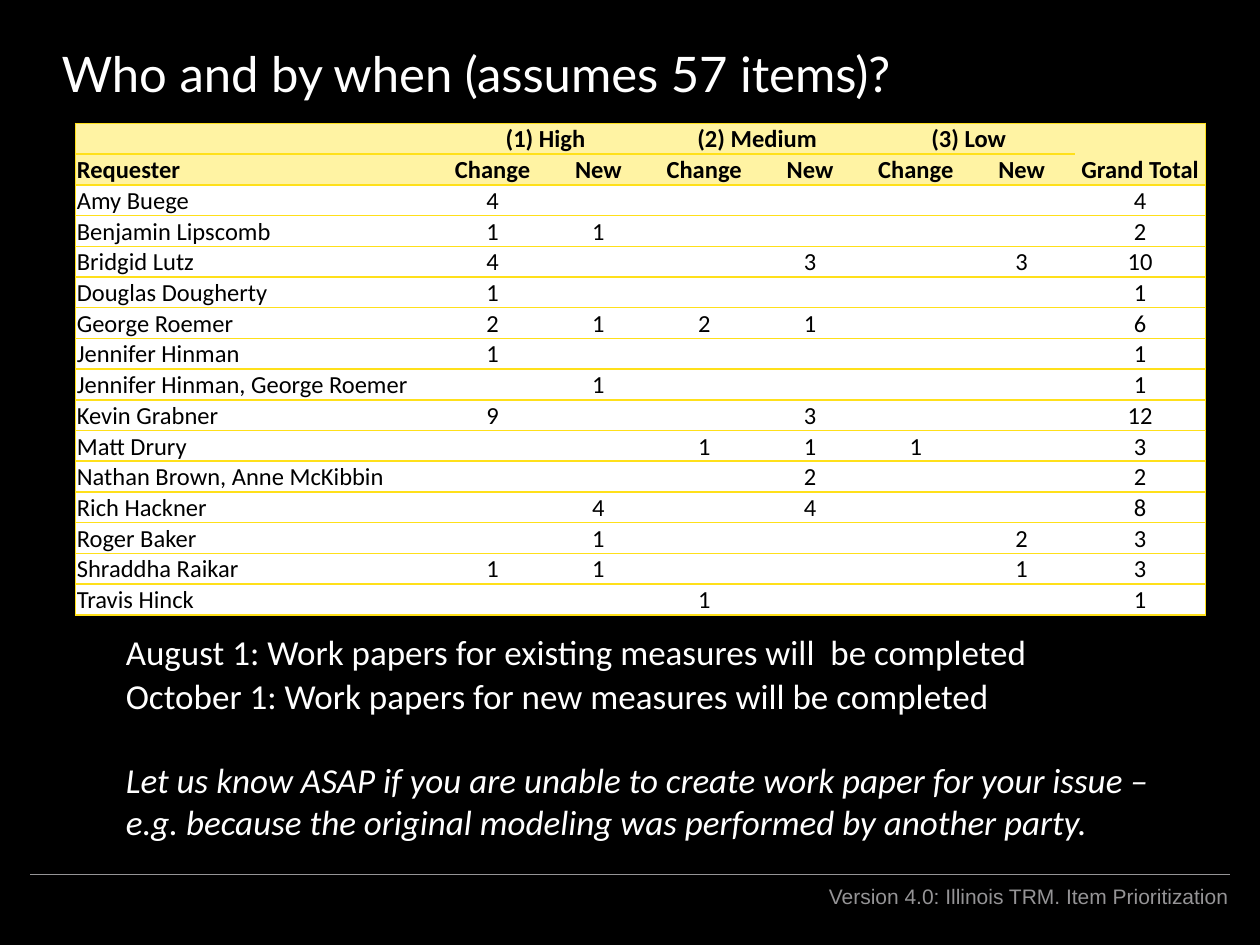
from dataclasses import dataclass

from lxml import etree
from pptx import Presentation
from pptx import util as u
from pptx.dml import color
from pptx.enum import shapes, text
from pptx.oxml import ns


@dataclass(frozen=True)
class Theme:
    background: str = "000000"
    light: str = "FFFFFF"
    dark: str = "000000"
    muted: str = "959496"
    header: str = "FFF3A3"
    border: str = "FFE01A"
    title_font: str = "Lato"
    body_font: str = "Calibri"
    footer_font: str = "Arial"
    title_size: int = 28
    body_size: int = 20
    table_size: int = 14
    footer_size: int = 12
    rule_width: float = 0.75
    border_width: float = 1


THEME = Theme()
CENTER, RIGHT = text.PP_ALIGN.CENTER, text.PP_ALIGN.RIGHT

COLUMN_WIDTHS = [2.89] + [0.84] * 6 + [1.04]
PRIORITIES = ["(1) High", "(2) Medium", "(3) Low"]
# High, medium and low counts, each as change and new, then the grand total
REQUESTS = [
    ("Amy Buege", 4, "", "", "", "", "", 4),
    ("Benjamin Lipscomb", 1, 1, "", "", "", "", 2),
    ("Bridgid Lutz", 4, "", "", 3, "", 3, 10),
    ("Douglas Dougherty", 1, "", "", "", "", "", 1),
    ("George Roemer", 2, 1, 2, 1, "", "", 6),
    ("Jennifer Hinman", 1, "", "", "", "", "", 1),
    ("Jennifer Hinman, George Roemer", "", 1, "", "", "", "", 1),
    ("Kevin Grabner", 9, "", "", 3, "", "", 12),
    ("Matt Drury", "", "", 1, 1, 1, "", 3),
    ("Nathan Brown, Anne McKibbin", "", "", "", 2, "", "", 2),
    ("Rich Hackner", "", 4, "", 4, "", "", 8),
    ("Roger Baker", "", 1, "", "", "", 2, 3),
    ("Shraddha Raikar", 1, 1, "", "", "", 1, 3),
    ("Travis Hinck", "", "", 1, "", "", "", 1),
]
# Text, space before in points, italic
NOTES = [
    ("August 1: Work papers for existing measures will  be completed", 0, False),
    ("October 1: Work papers for new measures will be completed", 1, False),
    ("Let us know ASAP if you are unable to create work paper for your issue – "
     "e.g. because the original modeling was performed by another party.", 24, True),
]


def rgb(value):
    return color.RGBColor.from_string(value)


def set_all(obj, values):
    for name, value in values.items():
        setattr(obj, name, value)


def add_run(p, content, hue, **font):
    r = p.add_run()
    r.text = content
    set_all(r.font, font)
    r.font.color.rgb = rgb(hue)


def add_text_box(s, box, paragraphs, hue, align=None, anchor=text.MSO_ANCHOR.TOP, **font):
    tf = s.shapes.add_textbox(*map(u.Inches, box)).text_frame
    set_all(tf, {"word_wrap": True, "vertical_anchor": anchor})
    for i, (content, before, italic) in enumerate(paragraphs):
        p = tf.add_paragraph() if i else tf.paragraphs[0]
        p.alignment = align
        if before:
            p.space_before = u.Pt(before)
        add_run(p, content, hue, italic=italic, **font)


def add_rule(s, x1, x2, y):
    line = s.shapes.add_connector(shapes.MSO_CONNECTOR.STRAIGHT,
                                  *map(u.Inches, (x1, y, x2, y)))
    line.line.color.rgb = rgb(THEME.muted)
    line.line.width = u.Pt(THEME.rule_width)
    etree.SubElement(line._element.spPr, ns.qn("a:effectLst"))


def set_borders(cell, sides):
    """Draw the given sides (letters of LRTB) and clear the others."""
    props = cell._tc.get_or_add_tcPr()
    for side in "LRTB":
        ln = etree.SubElement(props, ns.qn(f"a:ln{side}"),
                              w=str(u.Pt(THEME.border_width)))
        if side in sides:
            fill = etree.SubElement(ln, ns.qn("a:solidFill"))
            etree.SubElement(fill, ns.qn("a:srgbClr"), val=THEME.border)
        else:
            etree.SubElement(ln, ns.qn("a:noFill"))


def format_cell(cell, content, fill, sides, bold, align):
    set_borders(cell, sides)
    cell.fill.solid()
    cell.fill.fore_color.rgb = rgb(fill)
    edge = u.Inches(0.01)
    set_all(cell, {"margin_left": edge, "margin_right": edge, "margin_top": edge,
                   "margin_bottom": 0, "vertical_anchor": text.MSO_ANCHOR.BOTTOM})
    p = cell.text_frame.paragraphs[0]
    p.alignment = align
    if content == "":
        # Keeps an empty cell from growing its row
        etree.SubElement(p._p, ns.qn("a:endParaRPr"), sz=str(THEME.table_size * 100))
    else:
        add_run(p, str(content), THEME.dark, bold=bold,
                size=u.Pt(THEME.table_size), name=THEME.body_font)


def add_request_table(s):
    top = [""] + [c for name in PRIORITIES for c in (name, "")] + ["Grand Total"]
    sub = ["Requester"] + ["Change", "New"] * len(PRIORITIES) + [""]
    rows = [top, sub, *REQUESTS]
    last = len(COLUMN_WIDTHS) - 1
    table = s.shapes.add_table(len(rows), len(COLUMN_WIDTHS),
                               *map(u.Inches, (0.6, 0.98, 9, 3.9))).table
    set_all(table, {"first_row": False, "horz_banding": False})
    for column, width in zip(table.columns, COLUMN_WIDTHS):
        column.width = u.Inches(width)
    for i, row in enumerate(rows):
        is_header = i < 2
        for j, content in enumerate(row):
            sides = "TB" + ("L" if j == 0 else "R" if j == last else "")
            if j == last and is_header:
                sides = "RT" if i == 0 else "RB"
            format_cell(table.cell(i, j), content,
                        THEME.header if is_header else THEME.light,
                        sides, is_header, CENTER if j else None)
    for j in range(1, last, 2):
        table.cell(0, j).merge(table.cell(0, j + 1))
    table.cell(0, last).merge(table.cell(1, last))


def main():
    prs = Presentation()
    set_all(prs, {"slide_width": u.Inches(10), "slide_height": u.Inches(7.5)})
    s = prs.slides.add_slide(prs.slide_layouts[6])
    s.background.fill.solid()
    s.background.fill.fore_color.rgb = rgb(THEME.background)

    add_text_box(s, (0.39, 0.3, 9, 1.07),
                 [("Who and by when (assumes 57 items)?", 0, False)], THEME.light,
                 size=u.Pt(THEME.title_size), name=THEME.title_font)
    add_text_box(s, (4.54, 6.96, 5.31, 0.5),
                 [("Version 4.0: Illinois TRM. Item Prioritization", 0, False)],
                 THEME.muted, align=RIGHT,
                 size=u.Pt(THEME.footer_size), name=THEME.footer_font)
    add_rule(s, 0.24, 9.76, 6.94)
    add_text_box(s, (0.9, 4.75, 8.75, 2.19), NOTES, THEME.light,
                 anchor=text.MSO_ANCHOR.MIDDLE,
                 size=u.Pt(THEME.body_size), name=THEME.body_font)
    add_request_table(s)
    prs.save("out.pptx")


if __name__ == "__main__":
    main()
